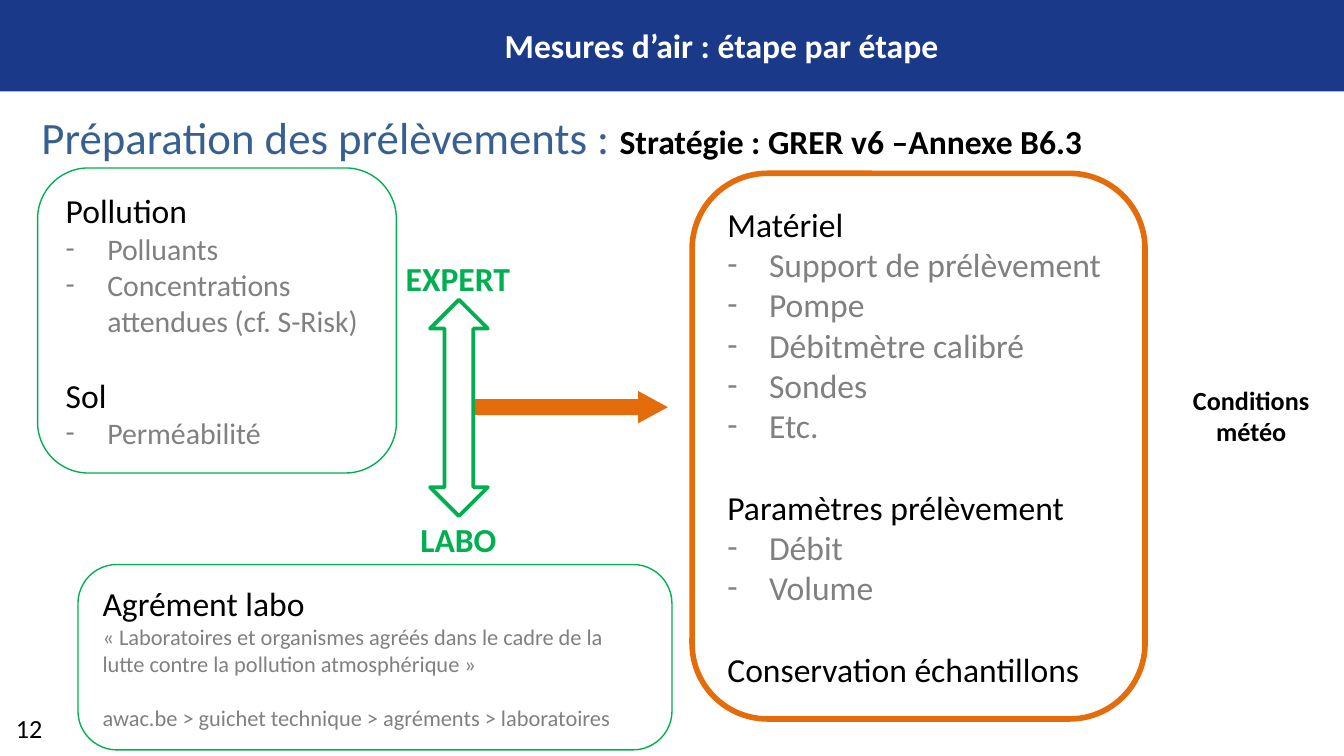
from lxml import etree
from pptx import Presentation
from pptx.dml.color import RGBColor
from pptx.enum.shapes import MSO_SHAPE as SHAPE
from pptx.enum.text import MSO_ANCHOR as ANCHOR, PP_ALIGN as ALIGN
from pptx.oxml.ns import qn
from pptx.util import Inches, Pt

THEME = {
    "font": "Calibri",
    "navy": "1A3989", "blue": "376092", "green": "00B050", "orange": "E46C0A",
    "black": "000000", "gray": "808080", "white": "FFFFFF",
    "title": 24, "head": 18, "item": 16, "label": 14, "note": 12,
}
INDENT = 0.31
LINE = 1.22  # line height of the font, as a share of its size

# Content: labels as (text, box, size, colour, bold, centred, wrap)
LABELS = [
    ("Mesures d’air : étape par étape", (0.87, 0.14, 9, 0.4),
     "head", "white", True, True, True),
    ("12", (0.02, 5.25, 0.53, 0.34), "label", "black", False, False, False),
    ("EXPERT", (2.92, 1.87, 0.98, 0.4), "head", "green", True, False, False),
    ("LABO", (3.03, 3.81, 0.77, 0.4), "head", "green", True, False, False),
    ("Conditions météo", (8.76, 2.81, 1.1, 0.57),
     "label", "black", True, True, True),
]
TITLE_BOX = (0.21, 0.77, 8.06, 1.11)
TITLE = [("Préparation des prélèvements : ", "title", "blue", False),
         ("Stratégie : GRER v6 –Annexe B6.3", "head", "black", True)]

# Cards hold groups of (heading, lines); a gap of one line parts the blocks
CARDS = [
    {"box": (0.28, 1.25, 2.67, 2.27), "line": ("green", 0.75),
     "size": "item", "bullets": True,
     "groups": [("Pollution", ["Polluants",
                               "Concentrations attendues (cf. S-Risk)"]),
                ("Sol", ["Perméabilité"])]},
    {"box": (0.58, 4.2, 4.42, 1.38), "line": ("green", 0.75), "round": 0.21,
     "size": "note", "bullets": False,
     "groups": [("Agrément labo",
                 ["« Laboratoires et organismes agréés dans le cadre de la "
                  "lutte contre la pollution atmosphérique »"]),
                (None, ["awac.be > guichet technique > agréments > laboratoires"])]},
    {"box": (5.15, 1.29, 3.37, 4.06), "line": ("orange", 3),
     "size": "head", "bullets": True,
     "groups": [("Matériel", ["Support de prélèvement", "Pompe",
                              "Débitmètre calibré", "Sondes", "Etc."]),
                ("Paramètres prélèvement", ["Débit", "Volume"]),
                ("Conservation échantillons", [])]},
]

# Arrows as (shape, box, adjustments, fill, outline)
ARROWS = [
    (SHAPE.RIGHT_ARROW, (3.41, 2.91, 1.56, 0.24), (0.5, 0.92), "orange", None),
    (SHAPE.UP_DOWN_ARROW, (3.2, 2.23, 0.43, 1.61), (0.5, 0.5),
     "white", ("green", 2)),
]


def color(name):
    return RGBColor.from_string(THEME[name])


def add_run(p, text, size, tint, bold=False):
    r = p.add_run()
    r.text = text
    r.font.name = THEME["font"]
    r.font.size = Pt(THEME[size])
    r.font.color.rgb = color(tint)
    r.font.bold = bold


def add_text(s, box, wrap=True):
    tf = s.shapes.add_textbox(*map(Inches, box)).text_frame
    tf.word_wrap = wrap
    return tf.paragraphs[0]


def add_shape(s, kind, box, fill=None, line=None, adjust=()):
    sp = s.shapes.add_shape(kind, *map(Inches, box))
    sp.shadow.inherit = False
    for i, value in enumerate(adjust):
        sp.adjustments[i] = value
    if fill:
        sp.fill.solid()
        sp.fill.fore_color.rgb = color(fill)
    else:
        sp.fill.background()
    if line:
        sp.line.color.rgb = color(line[0])
        sp.line.width = Pt(line[1])
    else:
        sp.line.fill.background()
    return sp


def add_dash(p):
    pPr = p._p.get_or_add_pPr()
    pPr.set("marL", str(Inches(INDENT)))
    pPr.set("indent", str(-Inches(INDENT)))
    etree.SubElement(pPr, qn("a:buFont")).set("typeface", THEME["font"])
    etree.SubElement(pPr, qn("a:buChar")).set("char", "-")


def add_card(s, card):
    adjust = [card["round"]] if "round" in card else []
    sp = add_shape(s, SHAPE.ROUNDED_RECTANGLE, card["box"],
                   line=card["line"], adjust=adjust)
    tf = sp.text_frame
    tf.word_wrap = True
    tf.vertical_anchor = ANCHOR.MIDDLE
    p = tf.paragraphs[0]
    for g, (heading, lines) in enumerate(card["groups"]):
        rows = [(heading, True)] if heading else []
        rows += [(text, False) for text in lines]
        for i, (text, is_head) in enumerate(rows):
            if g or i:
                p = tf.add_paragraph()
            p.alignment = ALIGN.LEFT
            if g and i == 0:
                p.space_before = Pt(round(THEME[card["size"]] * LINE, 1))
            if card["bullets"] and not is_head:
                add_dash(p)
            add_run(p, text, "head" if is_head else card["size"],
                    "black" if is_head else "gray")


def main():
    prs = Presentation()
    prs.slide_width = Inches(10)
    prs.slide_height = prs.slide_width * 9 // 16
    s = prs.slides.add_slide(prs.slide_layouts[6])

    # Header band and labels
    add_shape(s, SHAPE.RECTANGLE, (0, 0, 10, 0.68), fill="navy")
    for text, box, size, tint, bold, centred, wrap in LABELS:
        p = add_text(s, box, wrap)
        p.alignment = ALIGN.CENTER if centred else ALIGN.LEFT
        add_run(p, text, size, tint, bold)

    # Slide title
    p = add_text(s, TITLE_BOX)
    for part in TITLE:
        add_run(p, *part)

    # Cards, then the arrows between them
    for card in CARDS:
        add_card(s, card)
    for kind, box, adjust, fill, line in ARROWS:
        add_shape(s, kind, box, fill, line, adjust)

    prs.save("out.pptx")


if __name__ == "__main__":
    main()
